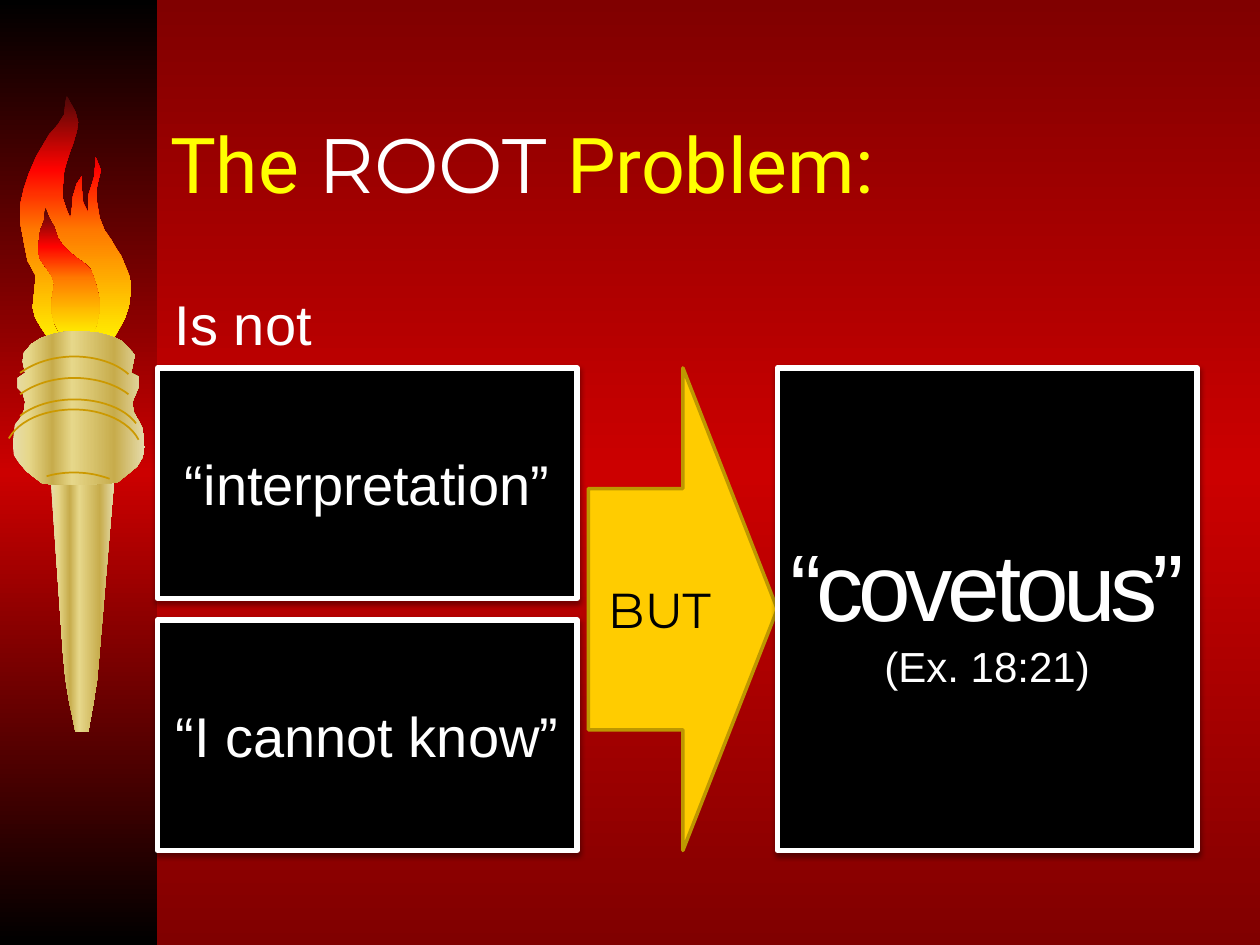
from dataclasses import dataclass

from lxml import etree
from pptx import Presentation
from pptx.dml.color import RGBColor
from pptx.enum.shapes import MSO_SHAPE
from pptx.enum.text import MSO_ANCHOR, MSO_AUTO_SIZE, PP_ALIGN
from pptx.oxml.ns import qn
from pptx.util import Pt

PX = 9144  # EMU per px, 100 px to the inch
RECT, RIGHT_ARROW = MSO_SHAPE.RECTANGLE, MSO_SHAPE.RIGHT_ARROW
LEFT, CENTER = PP_ALIGN.LEFT, PP_ALIGN.CENTER
MIDDLE, TOP = MSO_ANCHOR.MIDDLE, MSO_ANCHOR.TOP
NO_FIT, GROW = MSO_AUTO_SIZE.NONE, MSO_AUTO_SIZE.SHAPE_TO_FIT_TEXT
DOWN, ACROSS = 90, 0


@dataclass(frozen=True)
class Theme:
    white: str = "FFFFFF"
    black: str = "000000"
    yellow: str = "FFFF00"
    arrow: str = "FFCC00"
    arrow_edge: str = "BD9700"
    ring: str = "CC9900"
    backdrop: tuple = ((0, "800000"), (50, "CC0000"), (100, "800000"))
    stripe: tuple = ((0, "000000"), (50, "CC0000"), (100, "000000"))
    fire: tuple = ((0, "4D0808"), (30, "FF0300"), (55, "FF7A00"), (100, "FFF200"))
    brass: tuple = ((0, "E6DCAC"), (12, "E6D78A"), (30, "C7AC4C"),
                    (45, "E6D78A"), (77, "C7AC4C"), (100, "E6DCAC"))
    body_font: str = "Arial"
    title_font: str = "Roboto"
    accent_font: str = "Montserrat"
    title_size: int = 44
    big_size: int = 54
    body_size: int = 32
    arrow_size: int = 28
    note_size: int = 24


FLAME = [
    (88, 272), (94, 262), (99, 253), (102, 244), (104, 234), (104, 223), (101, 215),
    (96, 203), (92, 197), (88, 190), (83, 183), (79, 173), (77, 161), (77, 148),
    (80, 135), (76, 125), (75, 140), (70, 156), (70, 169), (66, 161), (65, 151),
    (65, 140), (61, 146), (58, 156), (57, 167), (56, 174), (53, 167), (50, 158),
    (50, 146), (51, 135), (55, 122), (58, 114), (61, 104), (62, 97), (60, 89),
    (53, 76), (52, 81), (51, 91), (46, 99), (39, 107), (29, 124), (23, 138),
    (19, 150), (16, 163), (16, 176), (19, 192), (22, 207), (28, 218), (28, 224),
    (27, 234), (26, 244), (28, 252), (32, 259), (36, 265), (41, 271), (56, 269),
    (72, 270)]
INNER_FLAME = [
    (36, 165), (35, 175), (32, 183), (31, 191), (30, 199), (32, 206), (37, 213),
    (41, 219), (43, 225), (42, 232), (41, 238), (41, 248), (43, 256), (46, 262),
    (52, 267), (72, 267), (75, 262), (77, 257), (79, 247), (79, 238), (77, 229),
    (75, 222), (72, 214), (67, 209), (60, 204), (55, 200), (50, 195), (46, 189),
    (43, 180), (39, 173)]
HANDLE = [(40, 376), (50, 518), (52, 539), (55, 557), (60, 581), (70, 581),
          (74, 559), (77, 540), (79, 518), (91, 376)]
BOWL = [
    (19, 280), (18, 287), (20, 296), (14, 300), (14, 308), (18, 312), (20, 319),
    (19, 326), (16, 332), (12, 337), (11, 344), (10, 352), (11, 361), (15, 367),
    (21, 374), (34, 384), (65, 385), (93, 383), (103, 375), (109, 370), (113, 363),
    (115, 355), (113, 340), (110, 334), (106, 327), (105, 319), (108, 312),
    (110, 307), (110, 299), (104, 296), (107, 282), (102, 276), (97, 271), (91, 268),
    (85, 266), (77, 264), (65, 263), (53, 263), (43, 265), (33, 268), (25, 273)]
# Each ring is two cubic curves that meet at its crest.
RINGS = [
    [(16, 296), (27, 288), (42, 283), (59, 283), (76, 283), (92, 288), (102, 297)],
    [(16, 313), (27, 305), (42, 300), (59, 300), (76, 300), (92, 305), (102, 313)],
    [(7, 348), (15, 334), (35, 325), (59, 325), (82, 325), (103, 335), (110, 349)],
    [(16, 330), (26, 322), (42, 317), (59, 317), (80, 317), (99, 324), (108, 336)],
    [(37, 378), (44, 376), (51, 375), (59, 375), (69, 375), (79, 377), (87, 380)]]


def cubic(controls, steps=12):
    """Points along a Bézier curve with four control points."""
    for t in (i / steps for i in range(steps + 1)):
        weights = ((1 - t) ** 3, 3 * t * (1 - t) ** 2, 3 * t * t * (1 - t), t ** 3)
        yield tuple(sum(w * c[axis] for w, c in zip(weights, controls)) for axis in (0, 1))


def add_run(paragraph, text, *, size, font, color, spacing=0):
    run = paragraph.add_run()
    run.text = text
    run.font.size, run.font.name = Pt(size), font
    run.font.color.rgb = RGBColor.from_string(color)
    if spacing:
        run.font.fill.solid()
        run.font.color.rgb = RGBColor.from_string(color)
        paragraph.runs[-1].font.bold = False
        run._r.get_or_add_rPr().set("spc", str(spacing * 100))


def gradient(owner, fill, stops, angle):
    fill.gradient()
    grad = owner.element.find(".//" + qn("a:gradFill"))
    stop_list = grad.find(qn("a:gsLst"))
    stop_list.clear()
    for position, color in stops:
        stop = etree.SubElement(stop_list, qn("a:gs"), pos=str(position * 1000))
        etree.SubElement(stop, qn("a:srgbClr"), val=color)
    grad.find(qn("a:lin")).set("ang", str(angle * 60000))


class Deck:
    def __init__(self, theme):
        self.theme = theme
        self.presentation = Presentation()
        self.presentation.slide_width, self.presentation.slide_height = 1000 * PX, 750 * PX
        self.slide = self.presentation.slides.add_slide(self.presentation.slide_layouts[1])
        gradient(self.slide, self.slide.background.fill, theme.backdrop, DOWN)

    def placeholder(self, index, box):
        """Move a placeholder to its box, in front of what is drawn so far."""
        holder = self.slide.placeholders[index]
        holder.left, holder.top, holder.width, holder.height = (n * PX for n in box)
        self.slide.shapes.element.append(holder.element)
        return holder

    def shape(self, kind, box):
        return self.slide.shapes.add_shape(kind, *(n * PX for n in box))

    def paint(self, shape, *, fill=None, angle=DOWN, line=None, width=1):
        shape.shadow.inherit = False
        if fill is None:
            shape.fill.background()
        elif isinstance(fill, str):
            shape.fill.solid()
            shape.fill.fore_color.rgb = RGBColor.from_string(fill)
        else:
            gradient(shape, shape.fill, fill, angle)
        if line:
            shape.line.color.rgb = RGBColor.from_string(line)
            shape.line.width = Pt(width)
        else:
            shape.line.fill.background()

    def outline(self, points, *, close=True, **look):
        (x, y), *rest = [(x * PX, y * PX) for x, y in points]
        builder = self.slide.shapes.build_freeform(x, y)
        builder.add_line_segments(rest, close=close)
        self.paint(builder.convert_to_shape(), **look)

    def text(self, shape, *lines, align=CENTER, anchor=MIDDLE, fit=NO_FIT, wrap=True, before=0):
        """Write one paragraph; each line is a list of (text, format) runs."""
        frame = shape.text_frame
        frame.auto_size, frame.word_wrap, frame.vertical_anchor = fit, wrap, anchor
        paragraph = frame.paragraphs[0]
        paragraph.alignment, paragraph.space_before = align, Pt(before)
        for number, runs in enumerate(lines):
            if number:
                paragraph.add_line_break()
            for words, style in runs:
                add_run(paragraph, words, **style)
        return paragraph

    def card(self, shape, *lines):
        self.paint(shape, fill=self.theme.black, line=self.theme.white, width=3)
        effects = shape.element.find(".//" + qn("a:effectLst"))
        shadow = etree.SubElement(effects, qn("a:outerShdw"), blurRad="40000",
                                  dist="20000", dir="5400000", rotWithShape="0")
        color = etree.SubElement(shadow, qn("a:srgbClr"), val=self.theme.black)
        etree.SubElement(color, qn("a:alpha"), val="38000")
        properties = self.text(shape, *lines, before=6)._p.get_or_add_pPr()
        properties.set("marL", "0")
        properties.set("indent", "0")
        etree.SubElement(properties, qn("a:buNone"))


def main():
    theme = Theme()
    deck = Deck(theme)
    body = dict(size=theme.body_size, font=theme.body_font, color=theme.white)
    heading = dict(size=theme.title_size, font=theme.title_font, color=theme.yellow)
    accent = dict(heading, font=theme.accent_font, color=theme.white)

    deck.paint(deck.shape(RECT, (0, 0, 125, 750)), fill=theme.stripe)
    for flame in (FLAME, INNER_FLAME):
        deck.outline(flame, fill=theme.fire)
    for part in (HANDLE, BOWL):
        deck.outline(part, fill=theme.brass, angle=ACROSS)
    for ring in RINGS:
        deck.outline([*cubic(ring[:4]), *cubic(ring[3:])], close=False, line=theme.ring)

    deck.text(deck.placeholder(0, (125, 67, 850, 125)),
              [("The ", heading), ("ROOT ", accent), ("Problem:", heading)], align=LEFT)

    left, top, width, height, step = 125, 292, 333, 183, 200
    tall = step + height
    deck.card(deck.placeholder(1, (left, top, width, height)), [("“interpretation”", body)])

    arrow = deck.shape(RIGHT_ARROW, (467, top, 150, tall))
    deck.paint(arrow, fill=theme.arrow, line=theme.arrow_edge, width=2)
    deck.text(arrow, [("BUT", dict(size=theme.arrow_size, font=theme.accent_font,
                                   color=theme.black))])

    lead_in = deck.slide.shapes.add_textbox(129 * PX, 225 * PX, 142 * PX, 64 * PX)
    deck.text(lead_in, [("Is not", body)], align=LEFT, anchor=TOP, fit=GROW, wrap=False)

    deck.card(deck.shape(RECT, (left, top + step, width, height)), [("“I cannot know”", body)])
    deck.card(deck.shape(RECT, (617, top, width, tall)),
              [("“covetous”", dict(body, size=theme.big_size, spacing=-3))],
              [("(Ex. 18:21)", dict(body, size=theme.note_size))])
    deck.presentation.save("out.pptx")


if __name__ == "__main__":
    main()
